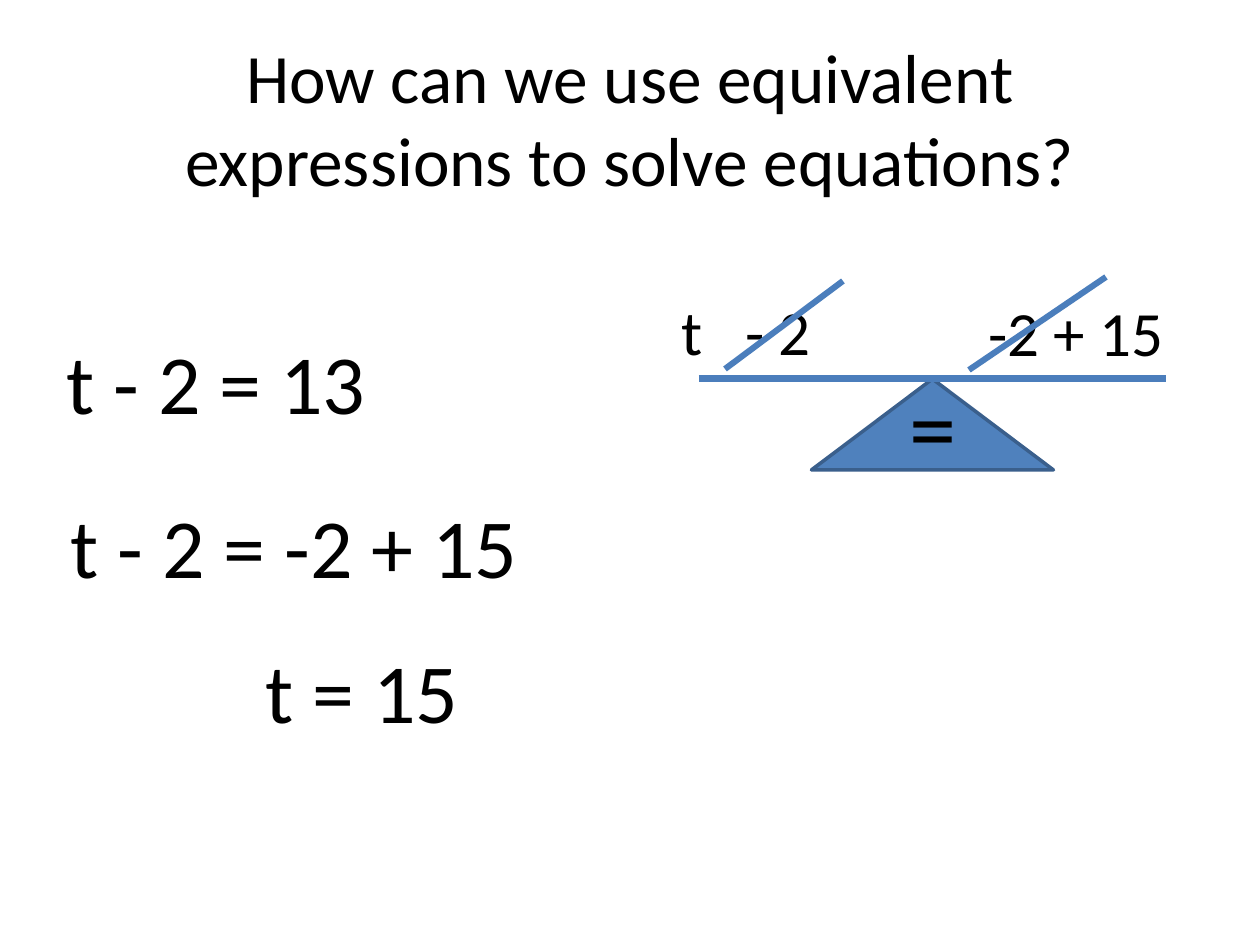
from dataclasses import dataclass

from lxml import etree
from pptx import Presentation, util as u
from pptx.dml.color import RGBColor
from pptx.enum import shapes, text
from pptx.oxml.ns import qn


@dataclass(frozen=True)
class Theme:
    font: str = "Calibri"
    ink: RGBColor = RGBColor(0, 0, 0)
    fill: RGBColor = RGBColor(0x4F, 0x81, 0xBD)
    edge: RGBColor = RGBColor(0x3A, 0x5F, 0x8C)
    stroke: RGBColor = RGBColor(0x4B, 0x7E, 0xBC)
    title: float = 39.6
    step: int = 48
    side: int = 36
    sign: int = 54


theme = Theme()
PX = u.Inches(1) / 126


def label(parent, words, size, *box):
    """Add a line of text to a slide or group; box is left, top, width, height in px."""
    shape = parent.shapes.add_textbox(*(round(n * PX) for n in box))
    frame = shape.text_frame
    frame.word_wrap = True
    frame.auto_size = text.MSO_AUTO_SIZE.SHAPE_TO_FIT_TEXT
    frame.text = words
    font = frame.paragraphs[0].runs[0].font
    font.name, font.size, font.color.rgb = theme.font, u.Pt(size), theme.ink
    return frame


def stroke(parent, width, *ends):
    """Add a straight line; ends are x1, y1, x2, y2 in px."""
    line = parent.shapes.add_connector(
        shapes.MSO_CONNECTOR.STRAIGHT, *(round(n * PX) for n in ends))
    line.line.color.rgb = theme.stroke
    line.line.width = u.Pt(width)
    etree.SubElement(line._element.spPr, qn("a:effectLst"))


deck = Presentation()
deck.slide_width, deck.slide_height = round(1260 * PX), round(945 * PX)
slide = deck.slides.add_slide(deck.slide_layouts[5])

# Title
title = slide.shapes.title
title.left, title.top, title.width, title.height = (
    round(n * PX) for n in (63, 38, 1134, 158))
frame = title.text_frame
frame.text = "How can we use equivalent expressions to solve equations?"
frame.word_wrap = True
frame.auto_size = text.MSO_AUTO_SIZE.NONE
frame.vertical_anchor = text.MSO_ANCHOR.MIDDLE
frame.paragraphs[0].alignment = text.PP_ALIGN.CENTER
font = frame.paragraphs[0].runs[0].font
font.name, font.size, font.color.rgb = theme.font, u.Pt(theme.title), theme.ink

# First two steps of the solution
label(slide, "t - 2 = 13", theme.step, 54, 324, 436, 115)
label(slide, "t - 2 = -2 + 15", theme.step, 58, 488, 582, 115)

# Balance: the pivot sits under the middle of the beam
scale = slide.shapes.add_group_shape()
left, right, beam = 699, 1166, 379
mid, base = (left + right) / 2, 242
pivot = scale.shapes.add_shape(
    shapes.MSO_SHAPE.ISOSCELES_TRIANGLE,
    *(round(n * PX) for n in (mid - base / 2, beam, base, 91)))
pivot.shadow.inherit = False
pivot.fill.solid()
pivot.fill.fore_color.rgb = theme.fill
pivot.line.color.rgb = theme.edge
pivot.line.width = u.Pt(2)
stroke(scale, 4, left, beam, right, beam)

pan = label(scale, "t\t- 2", theme.side, 669, 286, 236, 89)
tabs = etree.SubElement(pan.paragraphs[0]._p.get_or_add_pPr(), qn("a:tabLst"))
etree.SubElement(tabs, qn("a:tab"), pos=str(round(64 * PX)), algn="l")
label(scale, "-2 + 15", theme.side, 976, 287, 236, 89)
label(scale, "=", theme.sign, 897, 362, 72, 127)

# Strikes through the equal terms
strikes = slide.shapes.add_group_shape()
for ends in ((725, 369, 843, 281), (969, 370, 1106, 277)):
    stroke(strikes, 3.5, *ends)

# Answer
label(slide, "t = 15", theme.step, 253, 633, 582, 115)

deck.save("out.pptx")
